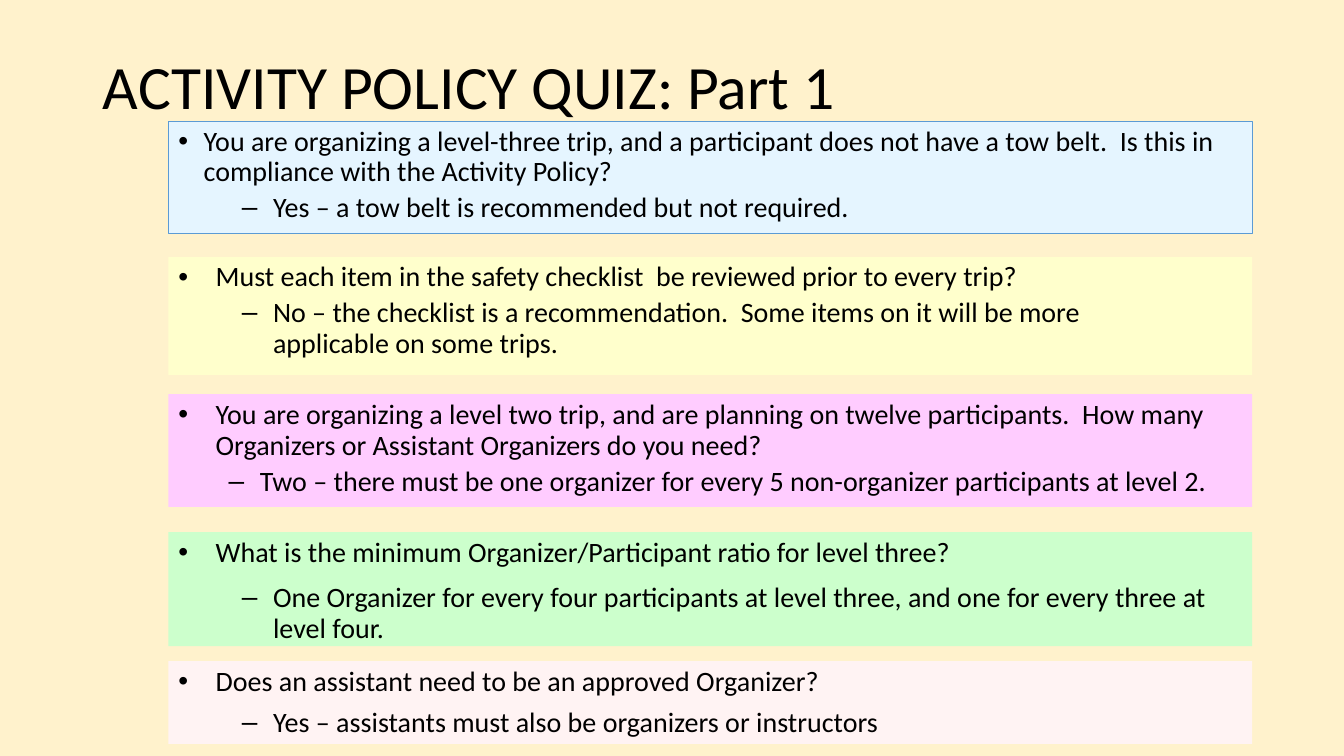
from lxml import etree
from pptx import Presentation
from pptx.dml.color import RGBColor
from pptx.enum import shapes, text
from pptx.oxml.ns import qn
from pptx.util import Inches, Pt

WIDE, HIGH = 13.33, 7.5
LEFT, SPAN = 1.67, 10.75   # shared by every card
INSET = 1.8                # left edge of most answers
FONT = "Calibri"
COLORS = {"page": "FFF2CC", "ink": "000000", "edge": "5B9BD5",
          "blue": "E5F5FF", "yellow": "FFFFCC", "pink": "FFCCFF",
          "green": "CCFFCC", "rose": "FFF3F3"}
TITLE = "ACTIVITY POLICY QUIZ: Part 1"

# fill, card top and height, question, answer, answer box
QUIZ = [
    ("blue", 1.21, 1.11,
     "You are organizing a level-three trip, and a participant does not have "
     "a tow belt.  Is this in compliance with the Activity Policy?",
     "Yes – a tow belt is recommended but not required.",
     (INSET, 1.86, 9.44, 0.5)),
    ("yellow", 2.55, 1.17,
     "Must each item in the safety checklist  be reviewed prior to every trip?",
     "No – the checklist is a recommendation.  Some items on it will be more "
     "applicable on some trips.",
     (INSET, 2.9, 9.75, 0.69)),
    ("pink", 3.91, 1.12,
     "You are organizing a level two trip, and are planning on twelve "
     "participants.  How many Organizers or Assistant Organizers do you need?",
     "Two – there must be one organizer for every 5 non-organizer "
     "participants at level 2.",
     (LEFT, 4.58, 10.65, 0.57)),
    ("green", 5.28, 1.13,
     "What is the minimum Organizer/Participant ratio for level three?",
     "One Organizer for every four participants at level three, and one for "
     "every three at level four.",
     (INSET, 5.73, 10.36, 0.56)),
    ("rose", 6.56, 0.82,
     "Does an assistant need to be an approved Organizer?",
     "Yes – assistants must also be organizers or instructors",
     (INSET, 6.97, 9.61, 0.42)),
]

# bullet, left margin, hanging indent, line spacing, space before, level
LEAD = ("•", 0.25, 0.25, 0.9, 10, 0)
ASK = ("•", 0.37, 0.37, 0.93, 8, 0)
REPLY = ("–", 0.81, 0.31, 0.93, 7, 1)


def color(name):
    return RGBColor.from_string(COLORS[name])


def place(shape, box):
    for name, size in zip(("left", "top", "width", "height"), box):
        setattr(shape, name, Inches(size))


def write(shape, words, size, anchor, line, before=0):
    frame = shape.text_frame
    frame.text = words
    para = frame.paragraphs[0]
    looks = {
        frame: {"word_wrap": True, "auto_size": text.MSO_AUTO_SIZE.NONE,
                "vertical_anchor": anchor,
                "margin_left": Inches(0.1), "margin_right": Inches(0.1),
                "margin_top": Inches(0.05), "margin_bottom": Inches(0.05)},
        para: {"alignment": text.PP_ALIGN.LEFT, "line_spacing": line,
               "space_before": Pt(before), "space_after": Pt(0)},
        para.runs[0].font: {"name": FONT, "size": Pt(size)},
    }
    for part, values in looks.items():
        for name, value in values.items():
            setattr(part, name, value)
    para.runs[0].font.color.rgb = color("ink")
    return para


def bullet(shape, words, style):
    """Write one bulleted paragraph with a hanging indent."""
    mark, margin, hang, line, before, level = style
    para = write(shape, words, 20, text.MSO_ANCHOR.TOP, line, before)
    para.level = level
    props = para._p.get_or_add_pPr()
    props.set("marL", str(Inches(margin)))
    props.set("indent", str(-Inches(hang)))
    etree.SubElement(props, qn("a:buFont")).set("typeface", "Arial")
    etree.SubElement(props, qn("a:buChar")).set("char", mark)


def main():
    deck = Presentation()
    deck.slide_width, deck.slide_height = Inches(WIDE), Inches(HIGH)
    slide = deck.slides.add_slide(deck.slide_layouts[1])
    slide.background.fill.solid()
    slide.background.fill.fore_color.rgb = color("page")

    title, body = slide.placeholders
    place(title, (0.92, 0.4, 11.5, 0.98))
    write(title, TITLE, 44, text.MSO_ANCHOR.MIDDLE, 0.9)

    for row, (fill, top, height, ask, reply, box) in enumerate(QUIZ):
        area = (LEFT, top, SPAN, height)
        if row == 0:
            card = body
            place(card, area)
            card.line.color.rgb = color("edge")
            card.line.width = Pt(0.75)
        else:
            card = slide.shapes.add_shape(
                shapes.MSO_SHAPE.RECTANGLE, *map(Inches, area))
            card.shadow.inherit = False
            card.line.fill.background()
        card.fill.solid()
        card.fill.fore_color.rgb = color(fill)
        bullet(card, ask, ASK if row else LEAD)
        note = slide.shapes.add_textbox(*map(Inches, box))
        bullet(note, reply, REPLY)

    deck.save("out.pptx")


if __name__ == "__main__":
    main()
